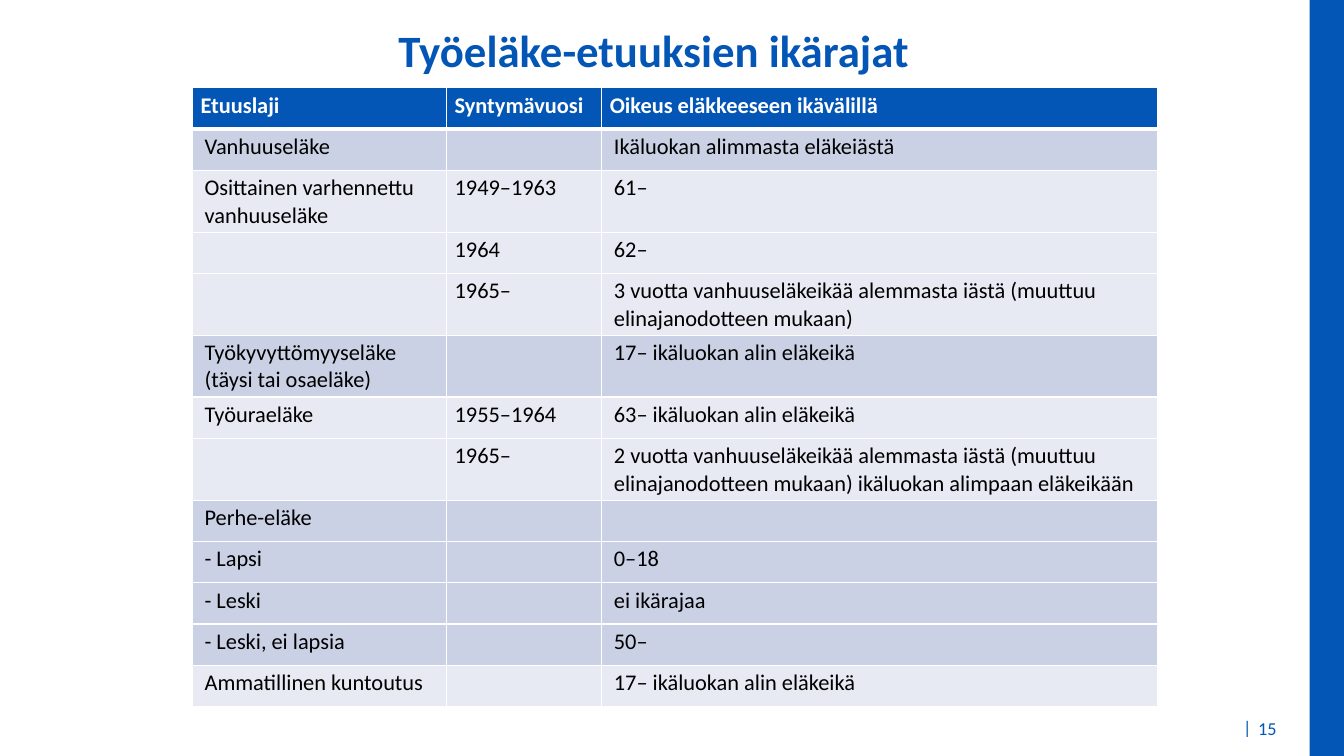
"""Build the slide on age limits for earnings-related pension benefits."""
from lxml import etree
from pptx import Presentation
from pptx import util as u
from pptx.dml.color import RGBColor
from pptx.enum import shapes, text
from pptx.oxml.ns import qn

BLUE, WHITE, BLACK = "0356B5", "FFFFFF", "000000"
DARK, LIGHT = "CBD1E5", "E7E9F3"
FONT = "Calibri"

HEADER = ("Etuuslaji", "Syntymävuosi", "Oikeus eläkkeeseen ikävälillä")
GROUPS = [
    [("Vanhuuseläke", "", "Ikäluokan alimmasta eläkeiästä")],
    [("Osittainen varhennettu vanhuuseläke", "1949–1963", "61–"),
     ("", "1964", "62–"),
     ("", "1965–", "3 vuotta vanhuuseläkeikää alemmasta iästä (muuttuu elinajanodotteen mukaan)")],
    [("Työkyvyttömyyseläke\n(täysi tai osaeläke)", "", "17– ikäluokan alin eläkeikä")],
    [("Työuraeläke", "1955–1964", "63– ikäluokan alin eläkeikä"),
     ("", "1965–", "2 vuotta vanhuuseläkeikää alemmasta iästä (muuttuu elinajanodotteen mukaan) "
                   "ikäluokan alimpaan eläkeikään")],
    [("Perhe-eläke", "", ""),
     ("- Lapsi", "", "0–18"),
     ("- Leski", "", "ei ikärajaa"),
     ("- Leski, ei lapsia", "", "50–")],
    [("Ammatillinen kuntoutus", "", "17– ikäluokan alin eläkeikä")],
]
COL_WIDTHS = (2.52, 1.54, 5.51)
ROW_HEIGHT = 0.41
TABLE_LEFT, TABLE_TOP = 1.91, 0.87

TEXTS = [
    ("|", (12.23, 7.06, 0.29, 0.35), dict(size=13, bold=False),
     dict(word_wrap=False, vertical_anchor=text.MSO_ANCHOR.TOP), text.PP_ALIGN.LEFT),
    ("Työeläke-etuuksien ikärajat", (0, 0.11, 12.97, 0.76), dict(size=32, bold=True),
     dict(word_wrap=True, vertical_anchor=text.MSO_ANCHOR.MIDDLE), text.PP_ALIGN.CENTER),
    ("15", (12.38, 7.05, 0.44, 0.35), dict(size=13, bold=False),
     dict(word_wrap=True, vertical_anchor=text.MSO_ANCHOR.MIDDLE), text.PP_ALIGN.LEFT),
]


def color(value):
    return RGBColor.from_string(value)


def set_attrs(obj, values):
    for name, value in values.items():
        setattr(obj, name, value)


def write(tf, content, size, bold, fill, align=text.PP_ALIGN.LEFT):
    tf.text = content
    for p in tf.paragraphs:
        p.alignment = align
        for item in [p, *p.runs]:
            set_attrs(item.font, dict(name=FONT, size=u.Pt(size), bold=bold))
            item.font.color.rgb = color(fill)


def set_borders(cell, widths):
    tc_pr = cell._tc.get_or_add_tcPr()
    for side, width in widths.items():
        ln = etree.SubElement(tc_pr, qn(f"a:ln{side}"), w=str(u.Pt(width)))
        fill = etree.SubElement(ln, qn("a:solidFill"))
        etree.SubElement(fill, qn("a:srgbClr"), val=WHITE)


def add_text(s, content, box, font, frame, align):
    tf = s.shapes.add_textbox(*map(u.Inches, box)).text_frame
    set_attrs(tf, frame)
    write(tf, content, fill=BLUE, align=align, **font)


def add_benefits(s):
    rows = [(HEADER, BLUE)]
    for i, group in enumerate(GROUPS):
        rows += [(row, LIGHT if i % 2 else DARK) for row in group]
    size = (sum(COL_WIDTHS), ROW_HEIGHT * len(rows))
    table = s.shapes.add_table(len(rows), len(COL_WIDTHS),
                               *map(u.Inches, (TABLE_LEFT, TABLE_TOP, *size))).table
    for col, width in zip(table.columns, COL_WIDTHS):
        col.width = u.Inches(width)
    for r, (row, fill) in enumerate(rows):
        table.rows[r].height = u.Inches(ROW_HEIGHT)
        head = r == 0
        for c, content in enumerate(row):
            cell = table.cell(r, c)
            left = 0.08 if head or c == 1 else 0.12
            set_attrs(cell, dict(margin_left=u.Inches(left), margin_right=u.Inches(0.08),
                                 margin_top=u.Inches(0.04), margin_bottom=u.Inches(0.04)))
            write(cell.text_frame, content, 16, head, WHITE if head else BLACK)
            set_borders(cell, dict(L=1, R=1, T=3 if r == 1 else 1, B=3 if head else 1))
            cell.fill.solid()
            cell.fill.fore_color.rgb = color(fill)


def main():
    prs = Presentation()
    set_attrs(prs, dict(slide_width=u.Inches(13.33), slide_height=u.Inches(7.5)))
    s = prs.slides.add_slide(prs.slide_layouts[6])
    sp = s.shapes.add_shape(shapes.MSO_SHAPE.RECTANGLE,
                            *map(u.Inches, (12.99, 0, 0.34, 7.5)))
    sp.shadow.inherit = False
    sp.fill.solid()
    sp.fill.fore_color.rgb = color(BLUE)
    sp.line.fill.background()
    for item in TEXTS:
        add_text(s, *item)
    add_benefits(s)
    prs.save("out.pptx")


if __name__ == "__main__":
    main()
